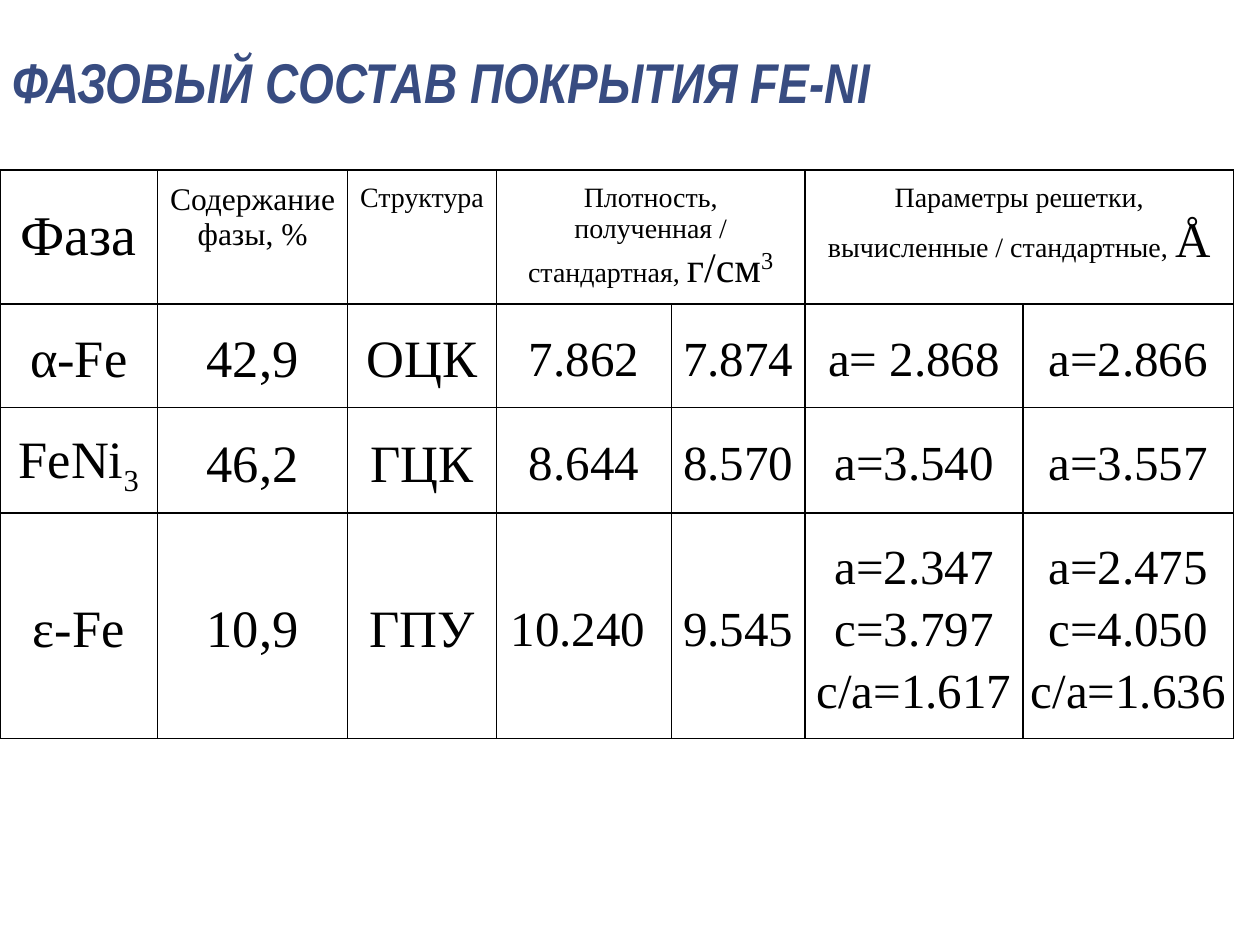
from itertools import product

from lxml import etree
from pptx import Presentation
from pptx import util as u
from pptx.dml.color import RGBColor
from pptx.enum import text
from pptx.oxml import ns

HUES = {"title": "384C81", "ink": "000000", "paper": "FFFFFF"}
COLS = [1.25, 1.51, 1.18, 1.39, 1.06, 1.73, 1.67]
ROWS = [0.95, 0.82, 0.84, 1.79]
SIZES = [30, 30, 30, 28, 28, 28, 28]
TIGHT = (4, 6)

HEAD = {
    0: [("Фаза", 32, 0)],
    1: [("Содержание фазы, %", 18, 0)],
    2: [("Структура", 16, 0)],
    3: [("Плотность, полученная / стандартная, ", 16, 0), ("г/см", 24, 0), ("3", 24, 30)],
    5: [("Параметры решетки, вычисленные / стандартные, ", 16, 0), ("Å", 28, 0)],
}
BODY = [
    ["α-Fe", "42,9", "ОЦК", "7.862", "7.874", "a= 2.868", "а=2.866"],
    ["FeNi_3", "46,2", "ГЦК", "8.644", "8.570", "a=3.540", "a=3.557"],
    ["ε-Fe", "10,9", "ГПУ", "10.240 ", "9.545",
     "a=2.347\nc=3.797\nc/a=1.617", "а=2.475 с=4.050\nс/a=1.636"],
]


def style(run, face, size, hue, base=0):
    run.font.name = face
    run.font.size = u.Pt(size)
    run.font.color.rgb = RGBColor.from_string(HUES[hue])
    if base:
        run.font._element.set("baseline", str(base * 1000))


def border(cell):
    props = cell._tc.get_or_add_tcPr()
    for spot, side in enumerate(("lnL", "lnR", "lnT", "lnB")):
        line = etree.Element(ns.qn("a:" + side), w=str(u.Pt(1)))
        fill = etree.SubElement(line, ns.qn("a:solidFill"))
        etree.SubElement(fill, ns.qn("a:srgbClr"), val=HUES["ink"])
        props.insert(spot, line)


def frame(cell, tight):
    cell.fill.solid()
    cell.fill.fore_color.rgb = RGBColor.from_string(HUES["paper"])
    cell.margin_left = cell.margin_right = u.Inches(0.01 if tight else 0.07)
    cell.margin_top = cell.margin_bottom = u.Inches(0.01 if tight else 0.1)
    border(cell)


def write(para, parts, gap=None):
    para.alignment = text.PP_ALIGN.CENTER
    if gap:
        para.line_spacing = gap
    for words, size, base in parts:
        run = para.add_run()
        run.text = words
        style(run, "Times New Roman", size, "ink", base)


def add_title(slide, deck):
    title = slide.shapes.title
    title.left, title.top = 0, int(deck.slide_height * 0.04)
    title.width, title.height = u.Inches(7.44), u.Inches(0.69)
    body = title.text_frame
    body.text = "ФАЗОВЫЙ СОСТАВ ПОКРЫТИЯ FE-NI"
    body.vertical_anchor = text.MSO_ANCHOR.MIDDLE
    para = body.paragraphs[0]
    para.alignment = text.PP_ALIGN.LEFT
    run = para.runs[0]
    style(run, "Arial Narrow", 32, "title")
    run.font.bold = run.font.italic = True


def add_grid(slide, deck):
    grid = slide.shapes.add_table(
        len(ROWS), len(COLS), 0, int(deck.slide_height * 0.18),
        u.Inches(sum(COLS)), u.Inches(sum(ROWS))).table
    grid.first_row = grid.horz_banding = False
    for col, width in zip(grid.columns, COLS):
        col.width = u.Inches(width)
    for row, height in zip(grid.rows, ROWS):
        row.height = u.Inches(height)
    for r, c in product(range(len(ROWS)), range(len(COLS))):
        frame(grid.cell(r, c), r > 0 and c in TIGHT)
    for c in (3, 5):
        grid.cell(0, c).merge(grid.cell(0, c + 1))
    return grid


def fill_head(grid):
    for c, parts in HEAD.items():
        write(grid.cell(0, c).text_frame.paragraphs[0], parts)
    grid.cell(0, 0).vertical_anchor = text.MSO_ANCHOR.MIDDLE


def fill_body(grid):
    for r, row in enumerate(BODY, 1):
        for c, words in enumerate(row):
            cell = grid.cell(r, c)
            cell.vertical_anchor = text.MSO_ANCHOR.MIDDLE
            for i, line in enumerate(words.split("\n")):
                body = cell.text_frame
                para = body.add_paragraph() if i else body.paragraphs[0]
                main_part, _, sub = line.partition("_")
                parts = [(main_part, SIZES[c], 0)]
                if sub:
                    parts.append((sub, SIZES[c], -25))
                write(para, parts, 1.15)


def main():
    deck = Presentation()
    deck.slide_width, deck.slide_height = u.Inches(10), u.Inches(7.5)
    slide = deck.slides.add_slide(deck.slide_layouts[5])
    add_title(slide, deck)
    grid = add_grid(slide, deck)
    fill_head(grid)
    fill_body(grid)
    deck.save("out.pptx")


if __name__ == "__main__":
    main()
